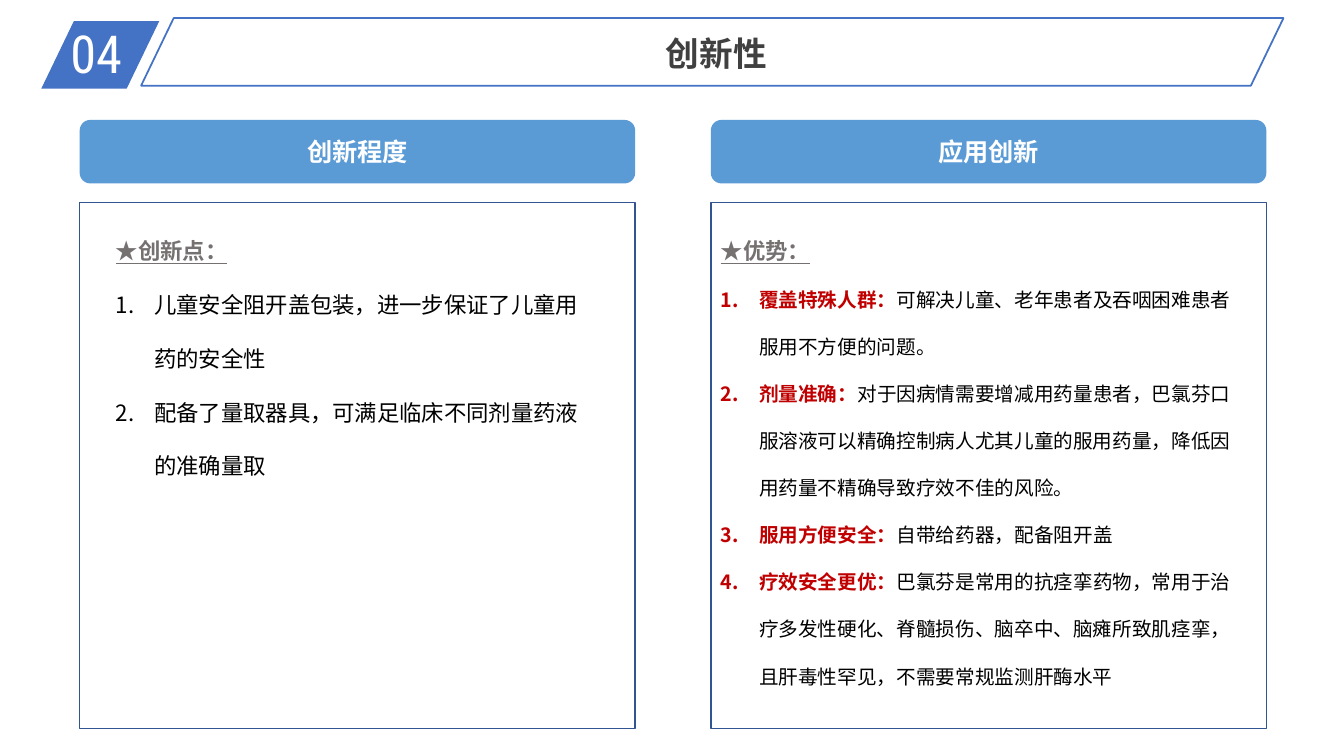
from lxml.etree import SubElement
from pptx import Presentation
from pptx.dml.color import RGBColor
from pptx.enum.shapes import MSO_SHAPE
from pptx.enum.text import MSO_ANCHOR, PP_ALIGN
from pptx.oxml.ns import qn
from pptx.util import Inches, Pt


def colour(value):
    return RGBColor.from_string(value)


def add_span(para, text, size=16, color="000000", bold=False, underline=False, font="Noto Sans CJK SC"):
    span = para.add_run()
    span.text = text
    span.font.size = Pt(size)
    span.font.bold = bold
    span.font.underline = underline
    span.font.color.rgb = colour(color)
    span.font.name = font
    SubElement(span._r.get_or_add_rPr(), qn("a:ea"), typeface=font)


class SlideBuilder:
    blue = "4472C4"
    header_fill = "5B9BD5"
    frame_line = "325491"
    heading = "767171"
    accent = "C00000"

    def __init__(self, page):
        self.page = page

    def shape(self, kind, left, top, width, height, fill=None, line=None, weight=1):
        box = self.page.shapes.add_shape(kind, Inches(left), Inches(top), Inches(width), Inches(height))
        box.shadow.inherit = False
        if fill:
            box.fill.solid()
            box.fill.fore_color.rgb = colour(fill)
        else:
            box.fill.background()
        if line:
            box.line.color.rgb = colour(line)
            box.line.width = Pt(weight)
        else:
            box.line.fill.background()
        return box

    def parallelogram(self, left, top, width, height, **style):
        box = self.shape(MSO_SHAPE.PARALLELOGRAM, left, top, width, height, **style)
        box.adjustments[0] = 0.482

    def text_box(self, left, top, width, height):
        box = self.page.shapes.add_textbox(Inches(left), Inches(top), Inches(width), Inches(height))
        box.text_frame.word_wrap = True
        return box.text_frame

    def label(self, left, top, width, height, text, align=PP_ALIGN.LEFT, **style):
        para = self.text_box(left, top, width, height).paragraphs[0]
        para.alignment = align
        add_span(para, text, **style)

    def panel(self, left, title):
        header = self.shape(MSO_SHAPE.ROUNDED_RECTANGLE, left, 1.19, 5.51, 0.63, fill=self.header_fill)
        frame = header.text_frame
        frame.margin_left = frame.margin_right = frame.margin_top = frame.margin_bottom = 0
        frame.vertical_anchor = MSO_ANCHOR.MIDDLE
        para = frame.paragraphs[0]
        para.alignment = PP_ALIGN.CENTER
        add_span(para, title, size=18, color="FFFFFF", bold=True)
        self.shape(MSO_SHAPE.RECTANGLE, left, 2.01, 5.51, 5.22, line=self.frame_line)

    def numbered_list(self, left, width, height, heading, items, size):
        frame = self.text_box(left, 2.04, width, height)
        para = frame.paragraphs[0]
        para.line_spacing = 2.0
        add_span(para, heading, color=self.heading, bold=True, underline=True)
        for lead, body in items:
            para = frame.add_paragraph()
            para.line_spacing = 2.0
            properties = para._p.get_or_add_pPr()
            properties.set("marL", str(Inches(0.38)))
            properties.set("indent", str(-Inches(0.38)))
            SubElement(properties, qn("a:buFont"), typeface="+mj-lt")
            SubElement(properties, qn("a:buAutoNum"), type="arabicPeriod")
            if lead:
                add_span(para, lead, size=size, color=self.accent, bold=True)
            add_span(para, body, size=size)


def main():
    deck = Presentation()
    deck.slide_width = Inches(13.33)
    deck.slide_height = Inches(7.5)
    builder = SlideBuilder(deck.slides.add_slide(deck.slide_layouts[6]))

    builder.parallelogram(0.41, 0.21, 1.17, 0.67, fill=builder.blue)
    builder.label(0.6, 0.16, 1.12, 0.73, "04", size=37.4, color="FFFFFF", font="Roboto Condensed")
    builder.label(2.95, 0.28, 8.31, 0.5, "创新性", align=PP_ALIGN.CENTER, size=24, color="404040", bold=True)
    builder.parallelogram(1.4, 0.18, 11.33, 0.67, line=builder.blue, weight=1.25)

    for left, title in ((0.79, "创新程度"), (7.05, "应用创新")):
        builder.panel(left, title)

    innovations = [
        ("", "儿童安全阻开盖包装，进一步保证了儿童用药的安全性"),
        ("", "配备了量取器具，可满足临床不同剂量药液的准确量取"),
    ]
    advantages = [
        ("覆盖特殊人群：", "可解决儿童、老年患者及吞咽困难患者服用不方便的问题。"),
        ("剂量准确：", "对于因病情需要增减用药量患者，巴氯芬口服溶液可以精确控制病人尤其儿童的服用药量，"
                  "降低因用药量不精确导致疗效不佳的风险。"),
        ("服用方便安全：", "自带给药器，配备阻开盖"),
        ("疗效安全更优：", "巴氯芬是常用的抗痉挛药物，常用于治疗多发性硬化、脊髓损伤、脑卒中、脑瘫所致肌痉挛，"
                    "且肝毒性罕见，不需要常规监测肝酶水平"),
    ]
    builder.numbered_list(7.05, 5.32, 5.19, "★优势：", advantages, size=14)
    builder.numbered_list(1.05, 4.98, 4.61, "★创新点：", innovations, size=16)
    deck.save("out.pptx")


if __name__ == "__main__":
    main()
